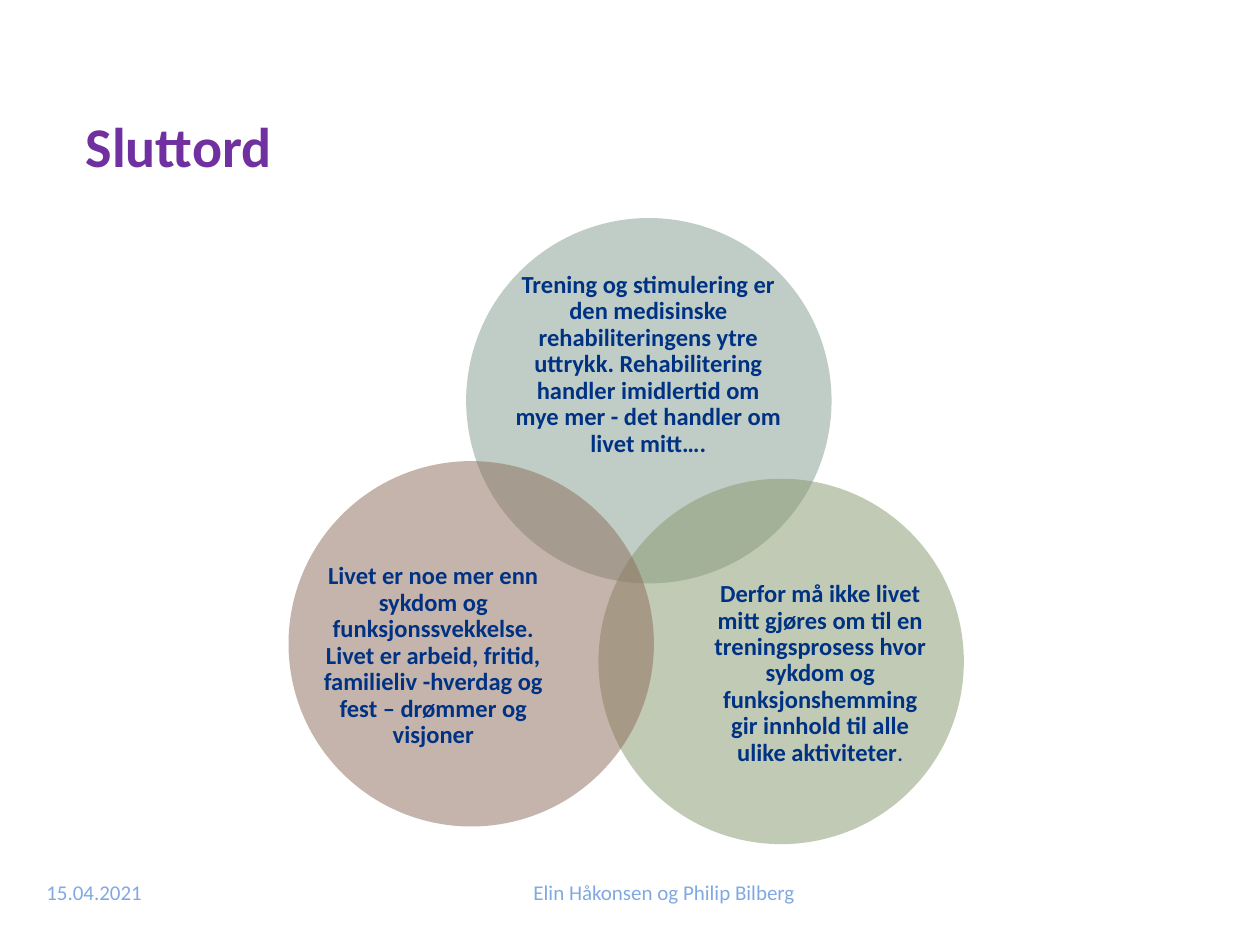
from typing import NamedTuple

from pptx import Presentation
from pptx import util as u
from pptx.dml.color import RGBColor
from pptx.enum import shapes, text
from pptx.oxml.ns import qn
from lxml import etree

COLORS = {
    "sage": "839C8F",
    "olive": "85976C",
    "brown": "8D6A59",
    "navy": "003283",
    "purple": "7030A0",
    "light_blue": "81A9E1",
}
FONT = "Calibri"
DIAMETER = 208.8
LEFT, CENTER = text.PP_ALIGN.LEFT, text.PP_ALIGN.CENTER


class Box(NamedTuple):
    left: float
    top: float
    width: float
    height: float


class Circle(NamedTuple):
    left: float
    top: float
    color: str
    label_box: Box
    label: str
    ending: str = ""  # closing characters that are not bold


CIRCLES = [
    Circle(266.4, 124.6, "sage", Box(293.8, 161.3, 153.4, 94.3),
           "Trening og stimulering er den medisinske rehabiliteringens ytre "
           "uttrykk. Rehabilitering handler imidlertid om mye mer - det "
           "handler om livet mitt…."),
    Circle(342, 273.6, "olive", Box(406.1, 327.6, 125.3, 115.2),
           "Derfor må ikke livet mitt gjøres om til en treningsprosess hvor "
           "sykdom og funksjonshemming gir innhold til alle ulike aktiviteter",
           "."),
    Circle(164.9, 263.5, "brown", Box(185, 317.5, 125.3, 115.2),
           "Livet er noe mer enn sykdom og funksjonssvekkelse. Livet er "
           "arbeid, fritid, familieliv -hverdag og fest – drømmer og visjoner"),
]


def rgb(name: str) -> RGBColor:
    return RGBColor.from_string(COLORS[name])


def add_text(s, box: Box, content: str, size: float, color: str,
             bold: bool = False, align=LEFT, side: float = 7.2,
             edge: float = 3.6):
    """Add a wrapped, vertically centred text box and return its paragraph."""
    tf = s.shapes.add_textbox(*(u.Pt(v) for v in box)).text_frame
    tf.word_wrap = True
    tf.vertical_anchor = text.MSO_ANCHOR.MIDDLE
    tf.margin_left = tf.margin_right = u.Pt(side)
    tf.margin_top = tf.margin_bottom = u.Pt(edge)
    tf.text = content
    p = tf.paragraphs[0]
    p.alignment = align
    format_run(p.runs[0], size, color, bold)
    return p


def format_run(r, size: float, color: str, bold: bool) -> None:
    r.font.name = FONT
    r.font.size = u.Pt(size)
    r.font.bold = bold
    r.font.color.rgb = rgb(color)


def add_circle(s, circle: Circle) -> None:
    """Add a half-transparent circle and its label."""
    sp = s.shapes.add_shape(shapes.MSO_SHAPE.OVAL, u.Pt(circle.left),
                            u.Pt(circle.top), u.Pt(DIAMETER), u.Pt(DIAMETER))
    sp.shadow.inherit = False
    sp.line.fill.background()
    sp.fill.solid()
    sp.fill.fore_color.rgb = rgb(circle.color)
    fill_color = sp.fill._xPr.find(qn("a:solidFill"))[0]
    etree.SubElement(fill_color, qn("a:alpha")).set("val", "50000")

    p = add_text(s, circle.label_box, circle.label, 14, "navy", True, CENTER,
                 side=0, edge=0)
    p.line_spacing = 0.9
    if circle.ending:
        r = p.add_run()
        r.text = circle.ending
        format_run(r, 14, "navy", False)


def main() -> None:
    prs = Presentation()
    prs.slide_width, prs.slide_height = u.Pt(720), u.Pt(540)
    s = prs.slides.add_slide(prs.slide_layouts[6])

    # Overlapping circles
    for circle in CIRCLES:
        add_circle(s, circle)

    # Title
    add_text(s, Box(20.2, 54.7, 680.4, 56.9), "Sluttord", 32, "purple", True,
             side=28.8)

    # Date and footer
    add_text(s, Box(19.4, 496.8, 79.2, 25.9), "15.04.2021", 12, "light_blue")
    add_text(s, Box(106.6, 496.8, 545.8, 25.9),
             "Elin Håkonsen og Philip Bilberg", 12, "light_blue", align=CENTER)

    prs.save("out.pptx")


if __name__ == "__main__":
    main()
